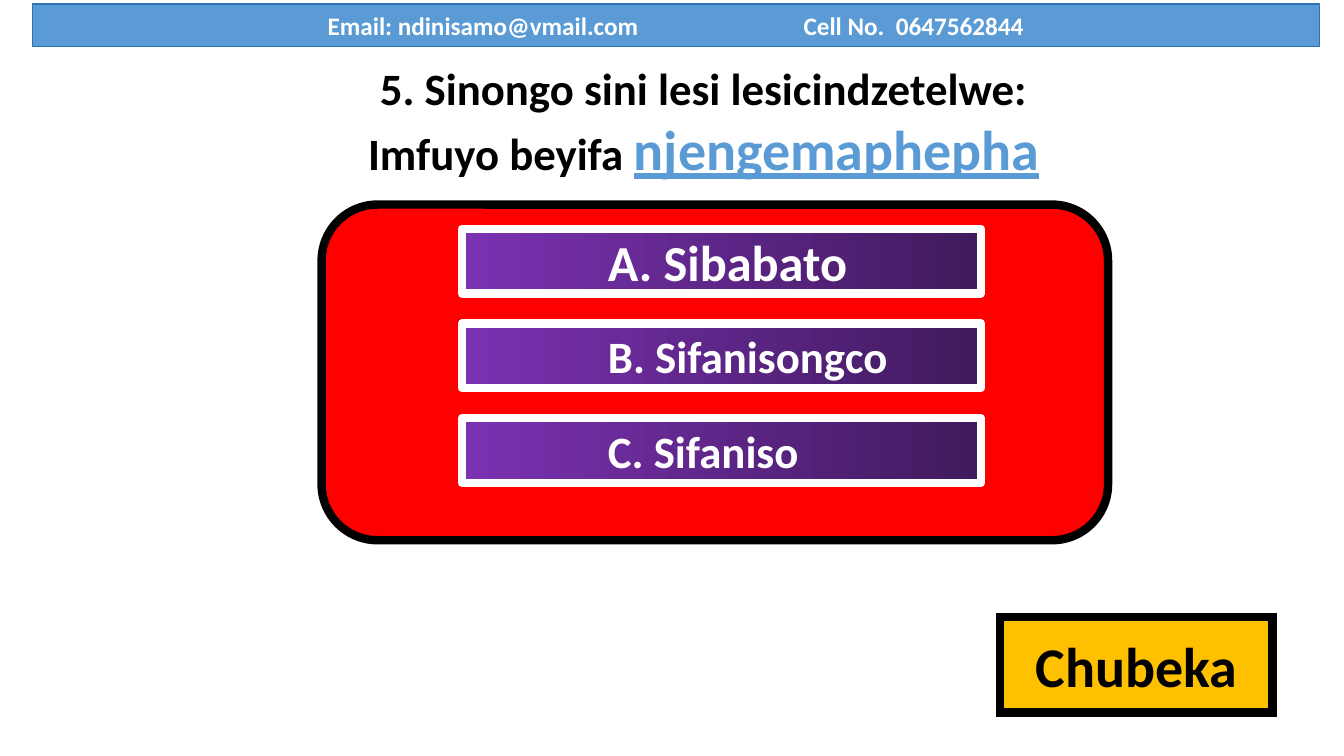
import pptx
import pptx.util
import pptx.dml.color
import pptx.enum.shapes
import pptx.enum.text
import pptx.oxml.ns
from lxml import etree

CONTACT = "Email: ndinisamo@vmail.com\tCell No.  0647562844"
QUESTION = "5. Sinongo sini lesi lesicindzetelwe:"
SENTENCE, UNDERLINED = "Imfuyo beyifa ", "njengemaphepha"
ANSWERS = [("A. Sibabato", 36), ("B. Sifanisongco", 32), ("C. Sifaniso", 32)]
NEXT = "Chubeka"

FONT = "Calibri"
COLORS = {
    "black": "000000", "white": "FFFFFF", "red": "FF0000", "amber": "FFC000",
    "blue": "5B9BD5", "dark blue": "2E75B6", "violet": "7B32B2", "plum": "401A5D",
}

WIDTH, HEIGHT = 13.33, 7.5
TITLE = (1.14, 0.55, 11.68, 1.4)
CARD = (3.19, 2.03, 7.8, 3.33)
BUTTON = (9.92, 6.12, 2.7, 0.95)
BAND = (0.32, 0.04, 12.77, 0.42)
ANSWER_LEFT, ANSWER_TOP, ANSWER_WIDTH, ANSWER_HEIGHT = 4.58, 2.27, 5.15, 0.64
ANSWER_PITCH = 0.94
ANSWER_INDENT = 1.45
EMAIL_INDENT, CELL_TAB = 2.93, 4.72

Inches, Pt = pptx.util.Inches, pptx.util.Pt
SHAPE = pptx.enum.shapes.MSO_SHAPE
ALIGN = pptx.enum.text.PP_ALIGN
ANCHOR = pptx.enum.text.MSO_ANCHOR
qn = pptx.oxml.ns.qn


def rgb(name):
    return pptx.dml.color.RGBColor.from_string(COLORS[name])


def set_font(font, size, color):
    font.name, font.size, font.bold = FONT, Pt(size), True
    font.color.rgb = rgb(color)


def add_box(s, kind, box, fill, line, weight=6):
    """Add a shape; a pair of fill colours makes a left-to-right gradient."""
    sp = s.shapes.add_shape(kind, *map(Inches, box))
    sp.shadow.inherit = False
    if isinstance(fill, tuple):
        sp.fill.gradient()
        sp.fill.gradient_angle = 0
        for stop, color, position in zip(sp.fill.gradient_stops, fill, (0, 1)):
            stop.color.rgb = rgb(color)
            stop.position = position
    else:
        sp.fill.solid()
        sp.fill.fore_color.rgb = rgb(fill)
    sp.line.color.rgb = rgb(line)
    sp.line.width = Pt(weight)
    return sp


def write(sp, text, size, color, align=ALIGN.CENTER, indent=0.1):
    tf = sp.text_frame
    tf.word_wrap = True
    tf.vertical_anchor = ANCHOR.MIDDLE
    tf.margin_left = Inches(indent)
    p = tf.paragraphs[0]
    p.alignment = align
    p.add_run().text = text
    set_font(p.font, size, color)
    return p


def add_title(s):
    sp = s.shapes.title
    sp.left, sp.top, sp.width, sp.height = map(Inches, TITLE)
    tf = sp.text_frame
    tf.word_wrap = True
    tf.auto_size = pptx.enum.text.MSO_AUTO_SIZE.NONE
    tf.vertical_anchor = ANCHOR.TOP
    lines = [[(QUESTION, 32, "black")],
             [(SENTENCE, 32, "black"), (UNDERLINED, 40, "blue")]]
    for i, runs in enumerate(lines):
        p = tf.add_paragraph() if i else tf.paragraphs[0]
        p.alignment = ALIGN.CENTER
        p.line_spacing, p.space_before = 1.0, Pt(0)
        for text, size, color in runs:
            r = p.add_run()
            r.text = text
            set_font(r.font, size, color)
            r.font.underline = text == UNDERLINED


def main():
    prs = pptx.Presentation()
    prs.slide_width, prs.slide_height = Inches(WIDTH), Inches(HEIGHT)
    s = prs.slides.add_slide(prs.slide_layouts[5])
    add_title(s)
    add_box(s, SHAPE.ROUNDED_RECTANGLE, CARD, "red", "black")

    for row, (answer, size) in enumerate(ANSWERS):
        box = (ANSWER_LEFT, ANSWER_TOP + row * ANSWER_PITCH, ANSWER_WIDTH, ANSWER_HEIGHT)
        sp = add_box(s, SHAPE.ACTION_BUTTON_CUSTOM, box, ("violet", "plum"), "white")
        write(sp, answer, size, "white", ALIGN.LEFT, ANSWER_INDENT)

    sp = add_box(s, SHAPE.ACTION_BUTTON_CUSTOM, BUTTON, "amber", "black")
    etree.SubElement(sp.line._get_or_add_ln(), qn("a:miter"), lim="800000")
    write(sp, NEXT, 40, "black")

    sp = add_box(s, SHAPE.RECTANGLE, BAND, "blue", "dark blue", 1)
    p = write(sp, CONTACT, 18, "white", ALIGN.LEFT, EMAIL_INDENT)
    tabs = etree.Element(qn("a:tabLst"))
    etree.SubElement(tabs, qn("a:tab"), pos=str(Inches(CELL_TAB)), algn="l")
    p._p.get_or_add_pPr().insert(0, tabs)

    prs.save("out.pptx")


if __name__ == "__main__":
    main()
